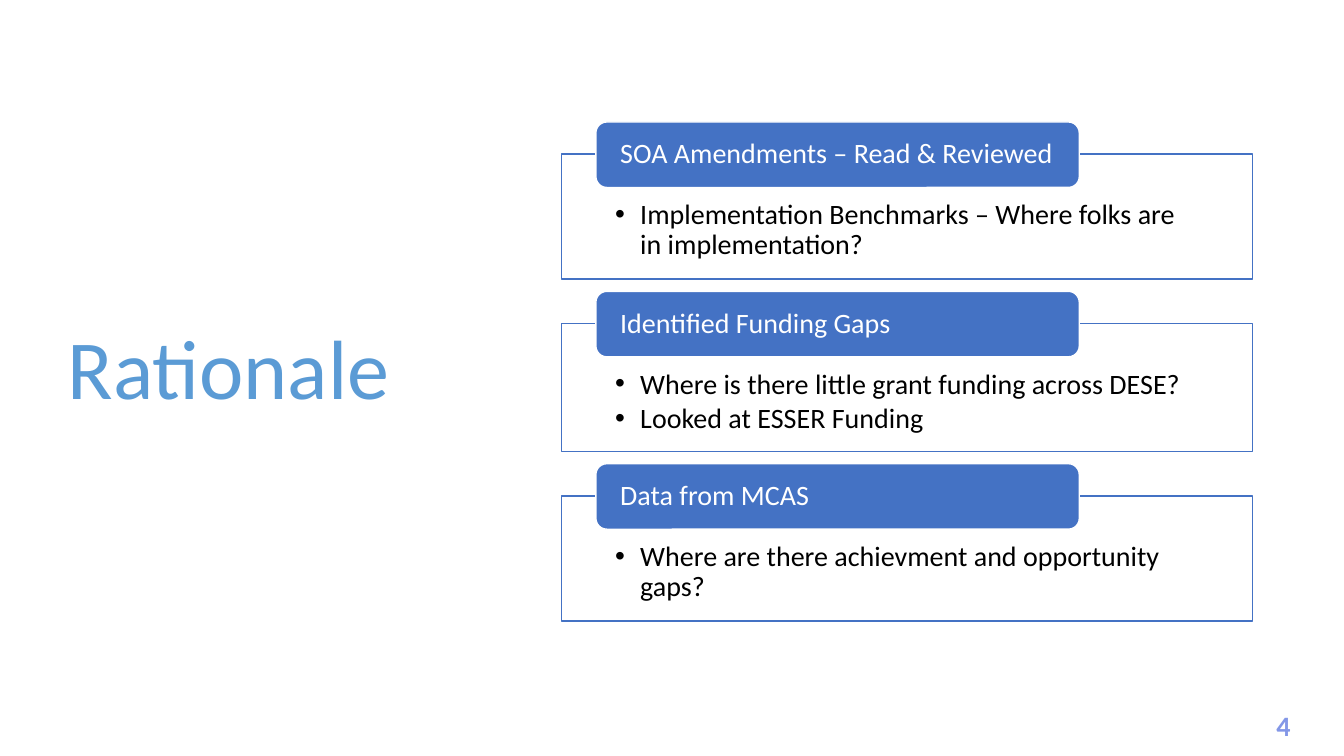
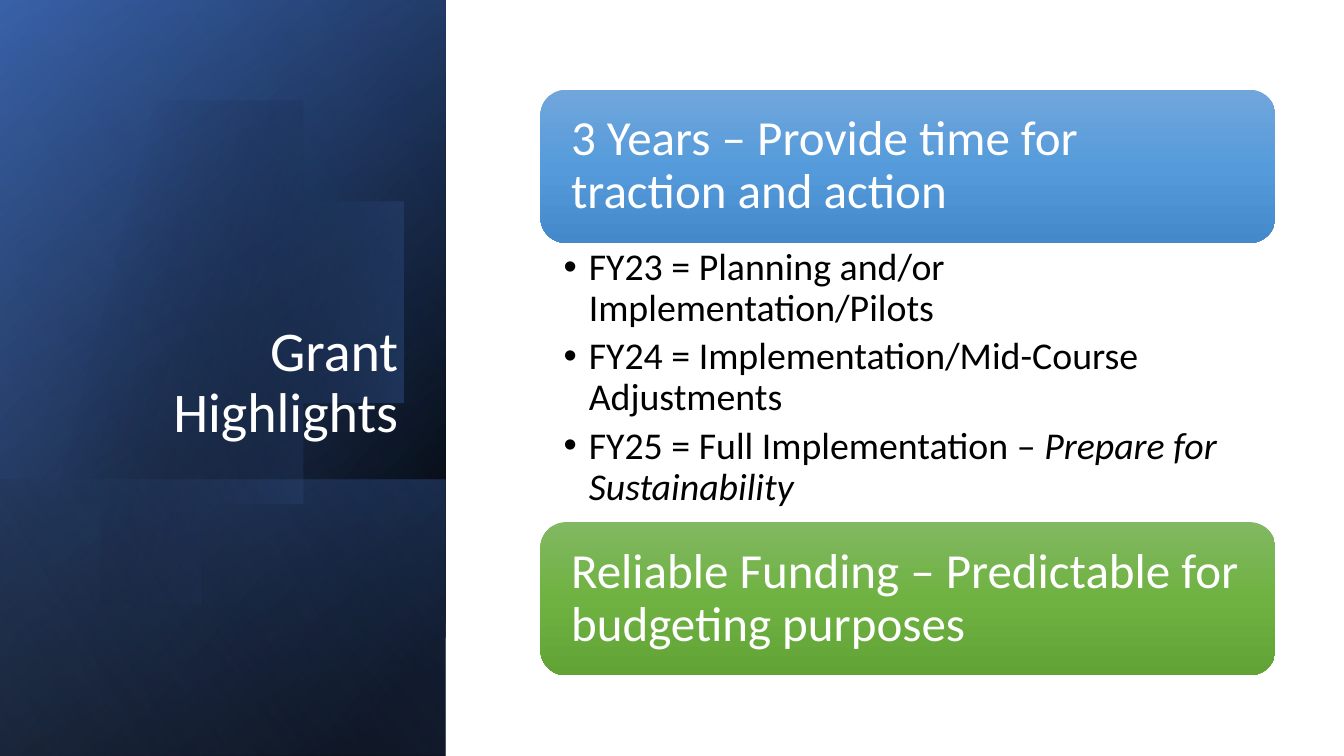
import math
import pptx
import pptx.dml.color
import pptx.enum.shapes
import pptx.enum.text
import pptx.oxml.ns
import pptx.util
from lxml import etree

FONT = "Calibri"
WHITE, BLACK, BLUE, SKY, LILAC = "FFFFFF", "000000", "4472C4", "5B9BD5", "8397E7"
Inches = pptx.util.Inches
Pt = pptx.util.Pt
qn = pptx.oxml.ns.qn
SHAPE = pptx.enum.shapes.MSO_SHAPE
ANCHOR = pptx.enum.text.MSO_ANCHOR
ALIGN = pptx.enum.text.PP_ALIGN


def rgb(color):
    return pptx.dml.color.RGBColor.from_string(color)


def box(x, y, w, h):
    return [Inches(v) for v in (x, y, w, h)]


def add_run(p, text, size, color, bold=False, italic=False):
    r = p.add_run()
    r.text = text
    r.font.name = FONT
    r.font.size = Pt(size)
    r.font.color.rgb = rgb(color)
    r.font.bold = bold
    r.font.italic = italic


def format_frame(tf, anchor, insets=(0.1, 0.05, 0.1, 0.05)):
    tf.word_wrap = True
    tf.auto_size = pptx.enum.text.MSO_AUTO_SIZE.NONE
    tf.vertical_anchor = anchor
    tf.margin_left, tf.margin_top, tf.margin_right, tf.margin_bottom = box(*insets)


def add_line(tf, text, size, color, align=ALIGN.LEFT):
    p = tf.paragraphs[0]
    p.alignment = align
    p.line_spacing = 0.9
    add_run(p, text, size, color)


def add_bullets(tf, items, size, after):
    for i, runs in enumerate(items):
        p = tf.paragraphs[0] if i == 0 else tf.add_paragraph()
        p.alignment = ALIGN.LEFT
        p.line_spacing = 0.9
        p.space_after = Pt(after)
        pPr = p._p.get_or_add_pPr()
        pPr.set("marL", str(Inches(0.25)))
        pPr.set("indent", str(-Inches(0.25)))
        etree.SubElement(pPr, qn("a:buFont"), typeface="Arial")
        etree.SubElement(pPr, qn("a:buChar"), char="•")
        for text, italic in runs:
            add_run(p, text, size, BLACK, italic=italic)


def fill_gradient(sp, stops, angle):
    sp.shadow.inherit = False
    sp.line.fill.background()
    sp.fill.gradient()
    sp.fill.gradient_angle = (360 - angle) % 360
    gs_list = sp.element.spPr.find(qn("a:gradFill")).find(qn("a:gsLst"))
    for gs in list(gs_list):
        gs_list.remove(gs)
    for pos, color, opacity in stops:
        gs = etree.SubElement(gs_list, qn("a:gs"), pos=str(pos * 1000))
        clr = etree.SubElement(gs, qn("a:srgbClr"), val=color)
        if opacity < 100:
            etree.SubElement(clr, qn("a:alpha"), val=str(opacity * 1000))


def add_solid(s, kind, area, fill, line):
    sp = s.shapes.add_shape(kind, *box(*area))
    sp.shadow.inherit = False
    sp.fill.solid()
    sp.fill.fore_color.rgb = rgb(fill)
    sp.line.color.rgb = rgb(line)
    sp.line.width = Pt(1)
    return sp


def add_title(s, area, text, size, color, anchor, align):
    title = s.shapes.title
    title.left, title.top, title.width, title.height = box(*area)
    format_frame(title.text_frame, anchor)
    add_line(title.text_frame, text, size, color, align)


def add_page_number(s, number):
    tf = s.shapes.add_textbox(*box(12.42, 6.98, 0.62, 0.44)).text_frame
    format_frame(tf, ANCHOR.TOP)
    tf.paragraphs[0].alignment = ALIGN.CENTER
    add_run(tf.paragraphs[0], number, 20, LILAC, bold=True)


def add_card(s, x, y, w, h, heading, bullets):
    body = add_solid(s, SHAPE.RECTANGLE, (x, y, w, h), WHITE, BLUE)
    format_frame(body.text_frame, ANCHOR.TOP, (0.53, 0.46, 0.53, 0.16))
    add_bullets(body.text_frame, [[(text, False)] for text in bullets], 20, 3)
    label = add_solid(s, SHAPE.ROUNDED_RECTANGLE,
                      (x + 0.34, y - 0.32, 0.7 * w, 0.65), BLUE, WHITE)
    format_frame(label.text_frame, ANCHOR.MIDDLE, (0.21, 0, 0.21, 0))
    add_line(label.text_frame, heading, 20, WHITE)


def add_banner(s, area, text, colors):
    sp = s.shapes.add_shape(SHAPE.ROUNDED_RECTANGLE, *box(*area))
    fill_gradient(sp, [(pos, c, 100) for pos, c in zip((0, 50, 100), colors)], 90)
    format_frame(sp.text_frame, ANCHOR.MIDDLE, (0.23, 0.23, 0.23, 0.23))
    add_line(sp.text_frame, text, 35, WHITE)


def add_panel(s, area, stops, angle):
    sp = s.shapes.add_shape(SHAPE.RECTANGLE, *box(*area))
    fill_gradient(sp, stops, angle)


def add_disc(s, cx, cy, radius):
    limit = math.acos(-cx / radius)
    steps = 120
    angles = [limit * (2 * i / steps - 1) for i in range(steps + 1)]
    points = [(cx + radius * math.cos(a), cy + radius * math.sin(a)) for a in angles]
    outline = s.shapes.build_freeform(*points[0], scale=Inches(1))
    outline.add_line_segments(points[1:], close=True)
    fill_gradient(outline.convert_to_shape(), [(29, BLACK, 0), (100, BLUE, 43)], 14)


def add_backdrop(s, x, y, w, h):
    full = (x, y, w, h)
    foot = 2.74
    add_panel(s, full, [(8, BLACK, 100), (100, "2F5597", 100)], 220)
    add_panel(s, full, [(0, BLACK, 0), (99, BLUE, 46)], 240)
    add_panel(s, (x, y + h - foot, w, foot), [(2, BLUE, 29), (100, BLACK, 30)], 140)
    add_disc(s, x + 1.45, y + 3.37, 2.28)
    add_panel(s, full, [(0, BLACK, 0), (99, "8FAADC", 11)], 150)


def new_slide(prs):
    return prs.slides.add_slide(prs.slide_layouts[5])


def build_rationale(prs):
    s = new_slide(prs)
    add_title(s, (0.57, 0.68, 4.16, 6.02), "Rationale", 60, SKY,
              ANCHOR.MIDDLE, ALIGN.LEFT)
    add_page_number(s, "4")
    cards = [
        (1.24, "SOA Amendments – Read & Reviewed",
         ["Implementation Benchmarks – Where folks are in implementation?"]),
        (1.27, "Identified Funding Gaps",
         ["Where is there little grant funding across DESE?",
          "Looked at ESSER Funding"]),
        (1.24, "Data from MCAS",
         ["Where are there achievment and opportunity gaps?"]),
    ]
    y = 1.53
    for h, heading, bullets in cards:
        add_card(s, 5.57, y, 6.85, h, heading, bullets)
        y += h + 0.44


def build_highlights(prs):
    s = new_slide(prs)
    add_backdrop(s, 0, 0, 4.42, 7.5)
    add_title(s, (0.64, 1.84, 3.41, 2.62), "Grant Highlights", 40, WHITE,
              ANCHOR.BOTTOM, ALIGN.RIGHT)
    tree = s.shapes._spTree
    tree.append(s.shapes.title.element)
    x, y, w, banner_h, list_h = 5.36, 0.89, 7.29, 1.52, 2.77
    add_banner(s, (x, y, w, banner_h),
               "3 Years – Provide time for traction and action",
               ("71A6DB", "559BDB", "448ACA"))
    y += banner_h
    tf = s.shapes.add_textbox(*box(x, y, w, list_h)).text_frame
    format_frame(tf, ANCHOR.TOP, (0.23, 0.05, 0.27, 0.05))
    add_bullets(tf, [
        [("FY23 = Planning and/or Implementation/Pilots", False)],
        [("FY24 = Implementation/Mid-Course Adjustments", False)],
        [("FY25 = Full Implementation – ", False),
         ("Prepare for Sustainability", True)],
    ], 27, 5.4)
    y += list_h
    add_banner(s, (x, y, w, banner_h),
               "Reliable Funding – Predictable for budgeting purposes",
               ("81B861", "6FB242", "62A336"))


def main():
    prs = pptx.Presentation()
    prs.slide_width = Inches(13.33)
    prs.slide_height = Inches(7.5)
    build_rationale(prs)
    build_highlights(prs)
    prs.save("out.pptx")


if __name__ == "__main__":
    main()
